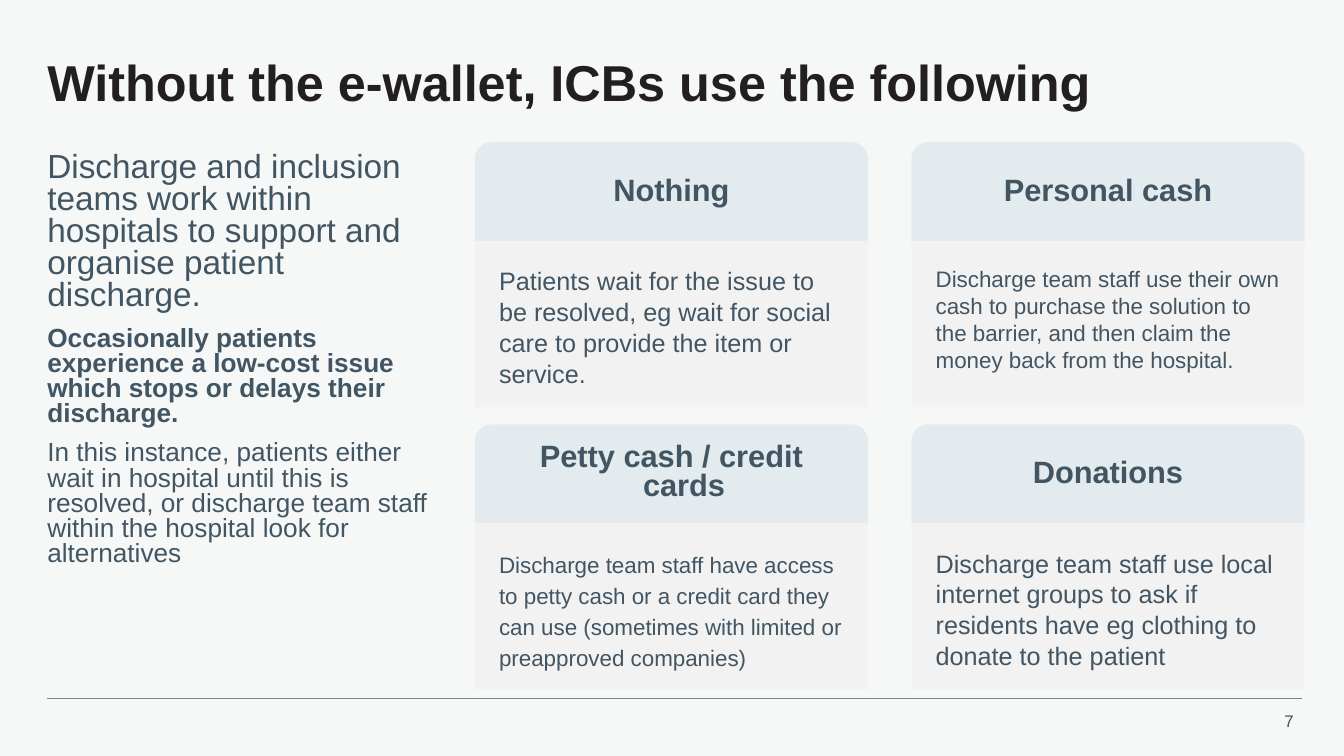
"""Build the slide on what ICBs use without the e-wallet."""
from lxml import etree
from pptx import Presentation
from pptx.dml.color import RGBColor
from pptx.enum import shapes, text
from pptx.oxml import ns
from pptx.util import Inches, Pt

COLOURS = {"page": "F6F8F8", "header": "E4EBEE", "card": "F2F2F2",
           "rule": "768692", "title": "231F20", "body": "425563"}
FONT = "Arial"
CARD_LEFTS = (4.71, 9.04)
CARD_TOPS = (1.41, 4.21)
CARD_W, HEADER_H, DETAIL_H = 3.9, 0.98, 1.65

INTRO = [
    ("Discharge and inclusion teams work within hospitals to support and "
     "organise patient discharge.", 23.8, False),
    ("Occasionally patients experience a low-cost issue which stops or delays "
     "their discharge.", 18.7, True),
    ("In this instance, patients either wait in hospital until this is resolved, "
     "or discharge team staff within the hospital look for alternatives", 18.7, False),
]

CARDS = [
    ("Nothing", 0.9, "Patients wait for the issue to be resolved, eg wait for "
     "social care to provide the item or service.", 18, Pt(22)),
    ("Personal cash", 0.9, "Discharge team staff use their own cash to purchase "
     "the solution to the barrier, and then claim the money back from the "
     "hospital.", 16, None),
    ("Petty cash / credit cards", 0.8, "Discharge team staff have access to petty "
     "cash or a credit card they can use (sometimes with limited or preapproved "
     "companies)", 16, Pt(22)),
    ("Donations", 0.9, "Discharge team staff use local internet groups to ask if "
     "residents have eg clothing to donate to the patient", 18, Pt(22)),
]


def rgb(name):
    return RGBColor.from_string(COLOURS[name])


def set_frame(tf, inset=0, anchor=text.MSO_ANCHOR.TOP):
    tf.word_wrap = True
    tf.vertical_anchor = anchor
    tf.margin_left = tf.margin_right = Inches(inset)
    tf.margin_top = tf.margin_bottom = Inches(inset)


def write(p, words, size, colour="body", bold=False, spacing=None,
          align=text.PP_ALIGN.LEFT):
    p.text = words
    p.alignment = align
    p.line_spacing = spacing
    for r in p.runs:
        r.font.name = FONT
        r.font.size = Pt(size)
        r.font.bold = bold
        r.font.color.rgb = rgb(colour)


def add_box(s, left, top, width, height):
    return s.shapes.add_textbox(Inches(left), Inches(top),
                                Inches(width), Inches(height))


def add_panel(s, kind, left, top, width, height, colour):
    sp = s.shapes.add_shape(kind, Inches(left), Inches(top),
                            Inches(width), Inches(height))
    sp.shadow.inherit = False
    sp.fill.solid()
    sp.fill.fore_color.rgb = rgb(colour)
    sp.line.fill.background()
    return sp


def add_title(s, words):
    tf = add_box(s, 0.47, 0.47, 12.47, 0.76).text_frame
    set_frame(tf, anchor=text.MSO_ANCHOR.MIDDLE)
    write(tf.paragraphs[0], words, 36, "title", True, 0.9)


def add_intro(s):
    tf = add_box(s, 0.47, 1.52, 3.9, 5.32).text_frame
    set_frame(tf)
    for i, (words, size, bold) in enumerate(INTRO):
        p = tf.add_paragraph() if i else tf.paragraphs[0]
        write(p, words, size, bold=bold, spacing=0.8)
        if i:
            p.space_before = Pt(10)


def add_card(s, left, top, heading, heading_spacing, detail, size, spacing):
    kinds = shapes.MSO_SHAPE
    add_panel(s, kinds.ROUND_2_SAME_RECTANGLE, left, top, CARD_W, HEADER_H, "header")

    tf = add_box(s, left + 0.12, top + 0.11, CARD_W - 0.24, 0.75).text_frame
    set_frame(tf, 0.1, text.MSO_ANCHOR.MIDDLE)
    p = tf.paragraphs[0]
    write(p, heading, 22, bold=True, spacing=heading_spacing,
          align=text.PP_ALIGN.CENTER)
    pPr = p._p.get_or_add_pPr()
    pPr.set("marL", str(Inches(0.25)))
    pPr.set("indent", str(-Inches(0.25)))

    sp = add_panel(s, kinds.RECTANGLE, left, top + HEADER_H, CARD_W, DETAIL_H, "card")
    set_frame(sp.text_frame, 0.24)
    write(sp.text_frame.paragraphs[0], detail, size, spacing=spacing)


def add_footer(s, number):
    rule = s.shapes.add_connector(shapes.MSO_CONNECTOR.STRAIGHT, Inches(0.47),
                                  Inches(6.93), Inches(12.91), Inches(6.93))
    rule.line.color.rgb = rgb("rule")
    rule.line.width = Pt(0.5)
    etree.SubElement(rule._element.spPr, ns.qn("a:effectLst"))
    tf = add_box(s, 12.52, 7, 0.41, 0.3).text_frame
    tf.margin_top = tf.margin_bottom = Inches(0.05)
    write(tf.paragraphs[0], number, 12, align=text.PP_ALIGN.RIGHT)
    tf.word_wrap = True


def main():
    prs = Presentation()
    prs.slide_width, prs.slide_height = Inches(13.33), Inches(7.5)
    s = prs.slides.add_slide(prs.slide_layouts[6])
    s.background.fill.solid()
    s.background.fill.fore_color.rgb = rgb("page")
    add_title(s, "Without the e-wallet, ICBs use the following")
    add_intro(s)
    for i, card in enumerate(CARDS):
        add_card(s, CARD_LEFTS[i % 2], CARD_TOPS[i // 2], *card)
    add_footer(s, "7")
    prs.save("out.pptx")


if __name__ == "__main__":
    main()
